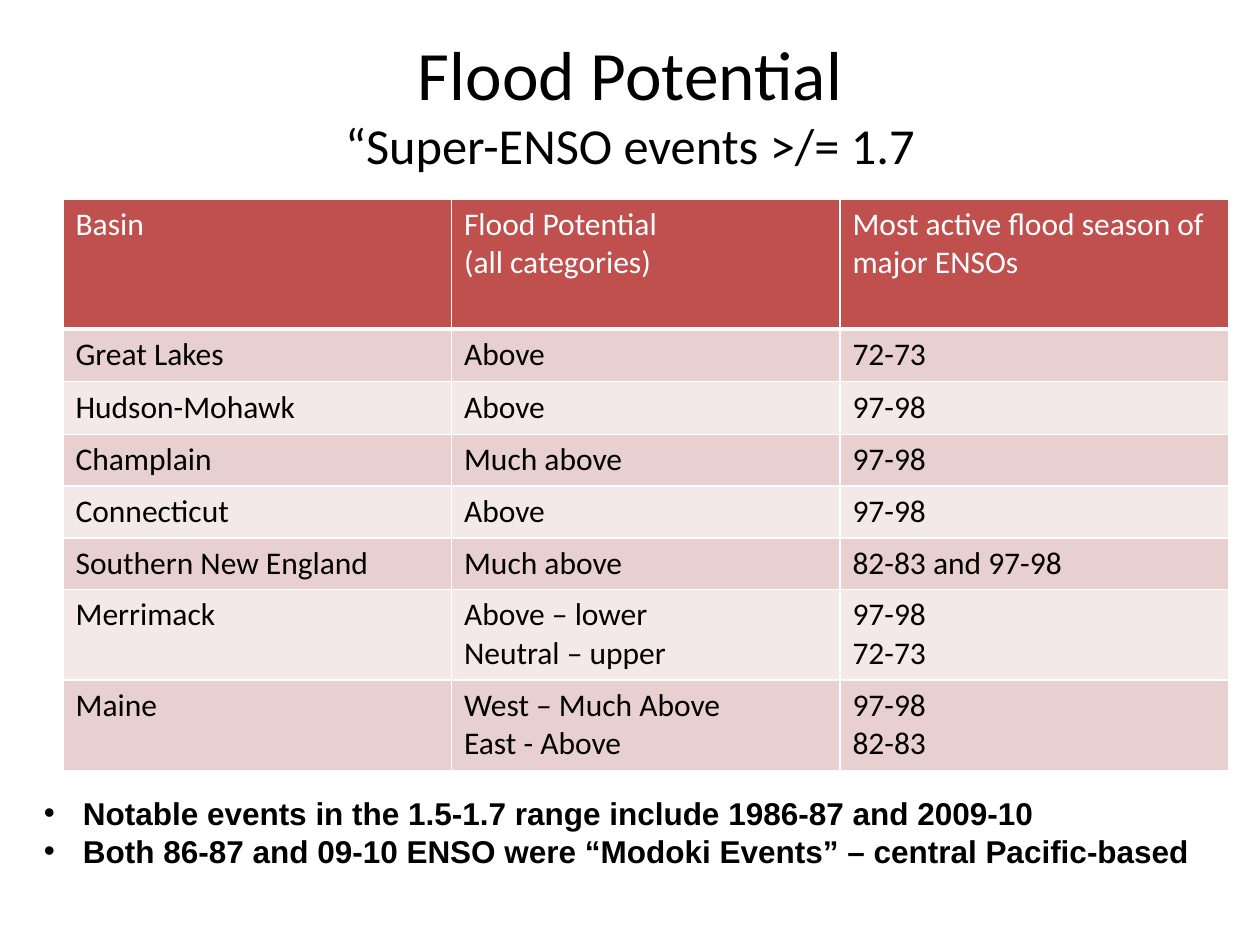
from lxml.etree import SubElement
from pptx import Presentation
from pptx.dml.color import RGBColor
from pptx.enum.text import MSO_ANCHOR, MSO_AUTO_SIZE, PP_ALIGN
from pptx.oxml import parse_xml
from pptx.oxml.ns import nsdecls, qn
from pptx.util import Inches, Pt

THEME = {
    "white": "FFFFFF", "black": "000000", "header": "C0504D",
    "bands": ("E8D0D0", "F4E9E9"),
    "heading": "Calibri", "body": "Arial",
    "title": 39.6, "subtitle": 28.8, "text": 18,
}


def style(font, name, size, color, bold=False):
    for key, value in {"name": name, "size": Pt(size), "bold": bold}.items():
        setattr(font, key, value)
    font.color.rgb = RGBColor.from_string(color)


def add_borders(cell, widths):
    tcPr = cell._tc.get_or_add_tcPr()
    for i, (side, width) in enumerate(widths.items()):
        tcPr.insert(i, parse_xml(
            f'<a:ln{side} {nsdecls("a")} w="{Pt(width)}"><a:solidFill>'
            f'<a:srgbClr val="{THEME["white"]}"/></a:solidFill></a:ln{side}>'))


prs = Presentation()
prs.slide_width, prs.slide_height = Inches(10), Inches(7.5)
s = prs.slides.add_slide(prs.slide_layouts[5])

# Title with a smaller second line
title = s.shapes.title
title.left, title.top = Inches(0.5), Inches(0.3)
title.width, title.height = Inches(9), Inches(1.03)
tf = title.text_frame
for key, value in {"word_wrap": True, "auto_size": MSO_AUTO_SIZE.NONE,
                   "vertical_anchor": MSO_ANCHOR.MIDDLE}.items():
    setattr(tf, key, value)
p = tf.paragraphs[0]
p.alignment = PP_ALIGN.CENTER
r = p.add_run()
r.text = "Flood Potential"
style(r.font, THEME["heading"], THEME["title"], THEME["black"])
p.add_line_break()
r = p.add_run()
r.text = "“Super-ENSO events >/= 1.7"
style(r.font, THEME["heading"], THEME["subtitle"], THEME["black"])

# Flood table
rows = [
    ("Basin", "Flood Potential\n(all categories)", "Most active flood season of major ENSOs"),
    ("Great Lakes", "Above", "72-73"),
    ("Hudson-Mohawk", "Above", "97-98"),
    ("Champlain", "Much above", "97-98"),
    ("Connecticut", "Above", "97-98"),
    ("Southern New England", "Much above", "82-83 and 97-98"),
    ("Merrimack", "Above – lower\nNeutral – upper", "97-98\n72-73"),
    ("Maine", "West – Much Above\nEast - Above", "97-98\n82-83"),
]
heights = [1.03, 0.42, 0.42, 0.41, 0.41, 0.41, 0.72, 0.72]
table = s.shapes.add_table(len(rows), 3, Inches(0.5), Inches(1.58),
                           Inches(9.25), Inches(sum(heights))).table
for i, (row, height) in enumerate(zip(rows, heights)):
    table.rows[i].height = Inches(height)
    is_header = i == 0
    fill = THEME["header"] if is_header else THEME["bands"][(i - 1) % 2]
    color = THEME["white"] if is_header else THEME["black"]
    top = 3 if i == 1 else 1
    bottom = 3 if is_header else 1
    for j, text in enumerate(row):
        cell = table.cell(i, j)
        cell.text = text
        cell.fill.solid()
        cell.fill.fore_color.rgb = RGBColor.from_string(fill)
        add_borders(cell, {"L": 1, "R": 1, "T": top, "B": bottom})
        for p in cell.text_frame.paragraphs:
            style(p.runs[0].font, THEME["heading"], THEME["text"], color)

# Bulleted notes
notes = [
    "Notable events in the 1.5-1.7 range include 1986-87 and 2009-10",
    "Both 86-87 and 09-10 ENSO were “Modoki Events” – central Pacific-based",
]
tf = s.shapes.add_textbox(Inches(0.25), Inches(6.25), Inches(9.58), Inches(0.71)).text_frame
tf.word_wrap = True
tf.auto_size = MSO_AUTO_SIZE.SHAPE_TO_FIT_TEXT
for i, note in enumerate(notes):
    p = tf.add_paragraph() if i else tf.paragraphs[0]
    pPr = p._p.get_or_add_pPr()
    pPr.set("marL", str(Inches(0.31)))
    pPr.set("indent", str(Inches(-0.31)))
    SubElement(pPr, qn("a:buFont"), typeface=THEME["body"])
    SubElement(pPr, qn("a:buChar"), char="•")
    r = p.add_run()
    r.text = note
    style(r.font, THEME["body"], THEME["text"], THEME["black"], bold=True)

prs.save("out.pptx")
